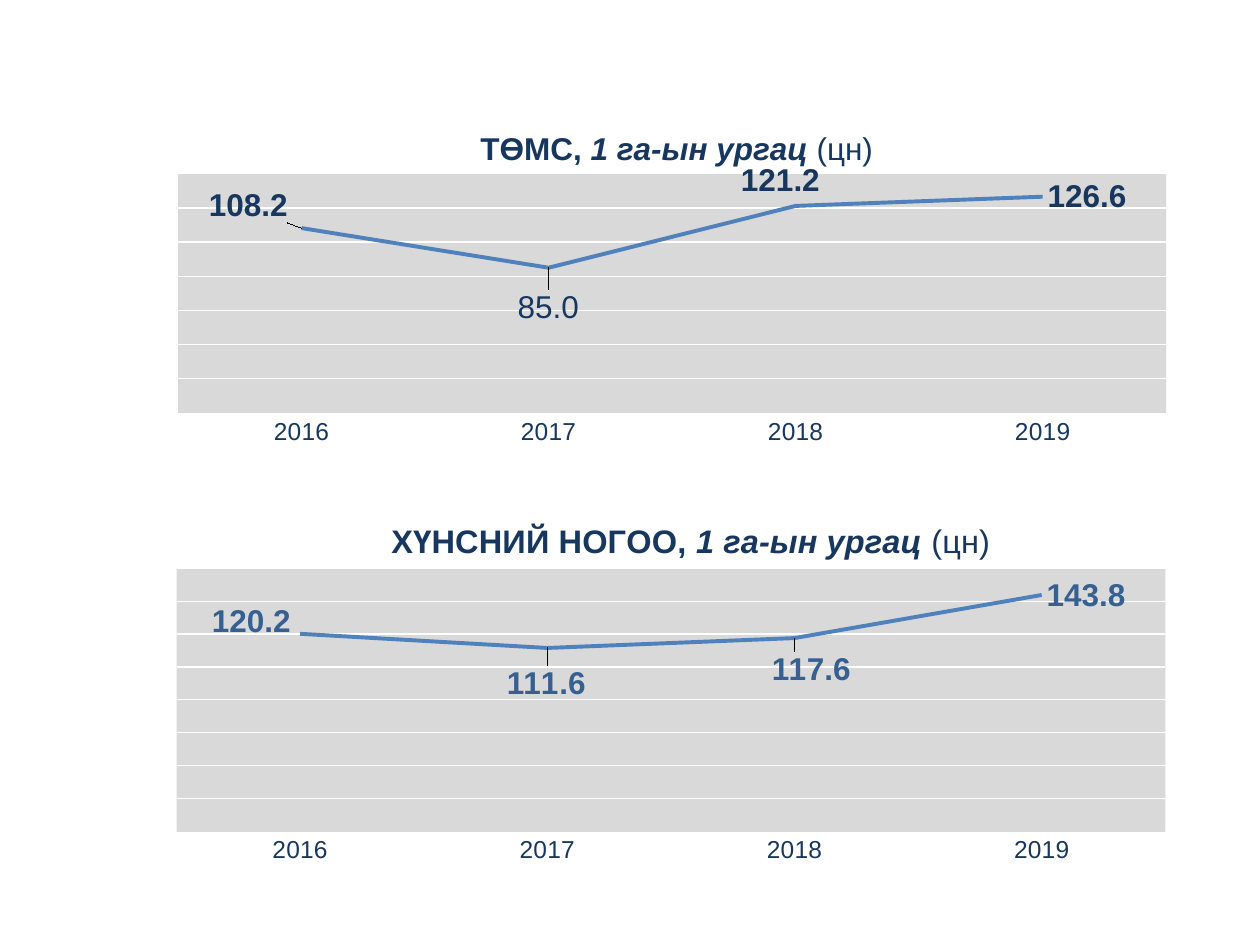
from lxml import etree
from pptx import Presentation
from pptx.chart.data import CategoryChartData
from pptx.dml.color import RGBColor
from pptx.enum.chart import XL_CHART_TYPE as ChartType, XL_LABEL_POSITION as LabelPos
from pptx.enum.chart import XL_MARKER_STYLE as Marker, XL_TICK_MARK as Tick
from pptx.oxml import parse_xml
from pptx.oxml.ns import nsdecls, qn
from pptx.util import Inches, Pt

COLORS = {"navy": "17375E", "blue": "376092", "line": "4F81BD",
          "plot": "D9D9D9", "grid": "FFFFFF"}
YEARS = ["2016", "2017", "2018", "2019"]

# Label offsets and positions are fractions of the chart's width and height.
CHARTS = [
    dict(box=(1.25, 0.83, 8.17, 2.75), crop="ТӨМС, ", title_size=18,
         title_at=(0.31, 0.06), plot=(0.02, 0.2, 0.96, 0.69), top=140,
         values=[108.2, 85, 121.2, 126.6], label_color="navy",
         offsets=[(-0.095, -0.066), (-0.035, 0.115), (-0.058, -0.074)],
         plain_labels={1: "85.0"}),
    dict(box=(1.25, 3.92, 8.42, 3.08), crop="ХҮНСНИЙ НОГОО, ", title_size=18.6,
         title_at=(0.217, 0.06), plot=(0.018, 0.192, 0.932, 0.678), top=160,
         values=[120.2, 111.6, 117.6, 143.8], label_color="blue",
         offsets=[(-0.088, -0.032), (-0.043, 0.09), (-0.026, 0.081)],
         plain_labels={}),
]


def style_font(font, size, color, bold=False):
    font.name = "Arial"
    font.size = Pt(size)
    font.bold = bold
    font.color.rgb = RGBColor.from_string(COLORS[color])


def place(parent, index, settings):
    """Give a chart element a manual layout, as its child number index."""
    for old in parent.findall(qn("c:layout")):
        parent.remove(old)
    layout = parse_xml(f"<c:layout {nsdecls('c')}/>")
    manual = etree.SubElement(layout, qn("c:manualLayout"))
    for tag, value in settings.items():
        etree.SubElement(manual, qn(f"c:{tag}")).set("val", str(value))
    parent.insert(index, layout)


prs = Presentation()
prs.slide_width, prs.slide_height = Inches(10), Inches(7.5)
s = prs.slides.add_slide(prs.slide_layouts[6])

for item in CHARTS:
    data = CategoryChartData(number_format="0.0")
    data.categories = YEARS
    data.add_series("Series 1", item["values"])
    box = [Inches(v) for v in item["box"]]
    chart = s.shapes.add_chart(ChartType.LINE, *box, data).chart
    chart.has_legend = False
    chart.font.name = "Calibri"
    chart.font.size = Pt(10)

    # Title
    chart.has_title = True
    p = chart.chart_title.text_frame.paragraphs[0]
    for text, bold, italic in [(item["crop"], True, False),
                               ("1 га-ын ургац", True, True),
                               (" (цн)", False, False)]:
        r = p.add_run()
        r.text = text
        style_font(r.font, item["title_size"], "navy", bold)
        r.font.italic = italic
    edges = {"xMode": "edge", "yMode": "edge"}
    title = chart.element.find(".//" + qn("c:title")) if hasattr(chart, "element") \
        else chart.chart_title._element
    place(title, 1, {**edges, **dict(zip("xy", item["title_at"]))})

    # Plot area
    plot_area = chart.plots[0]._element.getparent()
    place(plot_area, 0, {"layoutTarget": "inner", **edges,
                         **dict(zip("xywh", item["plot"]))})
    plot_area.append(parse_xml(
        f'<c:spPr {nsdecls("c", "a")}><a:solidFill><a:srgbClr val="{COLORS["plot"]}"/>'
        "</a:solidFill><a:ln><a:noFill/></a:ln></c:spPr>"))

    # Axes
    years = chart.category_axis
    years.major_tick_mark = years.minor_tick_mark = Tick.NONE
    style_font(years.tick_labels.font, 14, "navy")
    amounts = chart.value_axis
    amounts.visible = False
    amounts.minimum_scale, amounts.maximum_scale = 0, item["top"]
    amounts.major_unit = 20
    amounts.has_major_gridlines = True

    # Line
    plot = chart.plots[0]
    plot.vary_by_categories = False
    series = plot.series[0]
    series.smooth = False
    series.marker.style = Marker.NONE
    for line, color, width in [(years.format.line, "plot", 0.75),
                               (amounts.major_gridlines.format.line, "grid", 0.75),
                               (series.format.line, "line", 2.25)]:
        line.color.rgb = RGBColor.from_string(COLORS[color])
        line.width = Pt(width)

    # Value labels
    labels = series.data_labels
    labels.show_value = True
    labels.number_format = "0.0"
    labels.number_format_is_linked = False
    labels.position = LabelPos.RIGHT
    style_font(labels.font, 18, item["label_color"], True)
    for i, offset in enumerate(item["offsets"]):
        label = series.points[i].data_label
        if i in item["plain_labels"]:
            r = label.text_frame.paragraphs[0].add_run()
            r.text = item["plain_labels"][i]
            style_font(r.font, 18, item["label_color"])
        else:
            style_font(label.font, 18, item["label_color"], True)
        label.position = LabelPos.RIGHT
        point_label = labels._element.findall(qn("c:dLbl"))[i]
        place(point_label, 1, dict(zip("xy", offset)))

prs.save("out.pptx")
